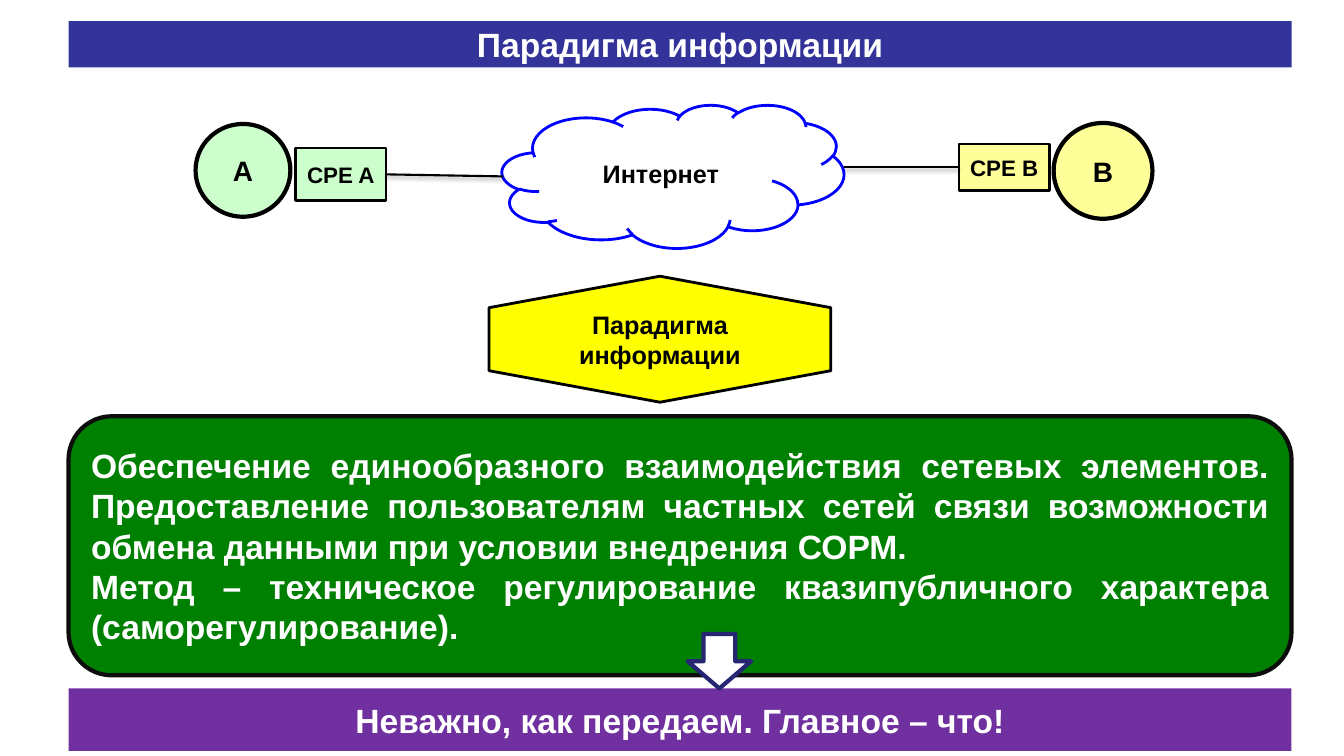
from pptx import Presentation
from pptx.dml.color import RGBColor
from pptx.enum.shapes import MSO_CONNECTOR, MSO_SHAPE
from pptx.enum.text import MSO_ANCHOR, MSO_AUTO_SIZE, PP_ALIGN
from pptx.oxml import parse_xml
from pptx.util import Inches, Pt

SHADOW = (
    '<a:effectLst xmlns:a="http://schemas.openxmlformats.org/drawingml/2006/main">'
    '<a:outerShdw blurRad="40000" dist="23000" dir="5400000" rotWithShape="0">'
    '<a:srgbClr val="000000"><a:alpha val="35000"/></a:srgbClr>'
    '</a:outerShdw></a:effectLst>'
)


def color(code):
    return RGBColor.from_string(code)


def write(shape, text, size=24, ink="000000", font="Arial",
          align=PP_ALIGN.CENTER, wrap=True):
    frame = shape.text_frame
    frame.word_wrap = wrap
    frame.auto_size = MSO_AUTO_SIZE.NONE
    frame.vertical_anchor = MSO_ANCHOR.MIDDLE
    frame.text = text
    for para in frame.paragraphs:
        para.alignment = align
        para.font.size = Pt(size)
        para.font.name = font
        para.font.bold = True
        para.font.color.rgb = color(ink)


class Board:
    left, width = 0.68, 12.13
    black, white = "000000", "FFFFFF"

    def __init__(self, slide):
        self.slide = slide

    def title(self, text, top, height, fill):
        shape = self.slide.shapes.title
        shape.left, shape.top = Inches(self.left), Inches(top)
        shape.width, shape.height = Inches(self.width), Inches(height)
        shape.fill.solid()
        shape.fill.fore_color.rgb = color(fill)
        write(shape, text, ink=self.white)

    def shape(self, kind, box, fill=None, line=None, weight=3, text=None, **style):
        shape = self.slide.shapes.add_shape(kind, *map(Inches, box))
        shape.shadow.inherit = False
        if fill:
            shape.fill.solid()
            shape.fill.fore_color.rgb = color(fill)
        else:
            shape.fill.background()
        if line:
            shape.line.color.rgb = color(line)
            shape.line.width = Pt(weight)
        else:
            shape.line.fill.background()
        if text:
            write(shape, text, **style)
        return shape

    def band(self, kind, top, height, fill, text, **style):
        box = (self.left, top, self.width, height)
        return self.shape(kind, box, fill, text=text, ink=self.white, **style)

    def node(self, box, fill, text):
        return self.shape(MSO_SHAPE.OVAL, box, fill, self.black, text=text, size=20)

    def label(self, box, fill, text):
        return self.shape(MSO_SHAPE.RECTANGLE, box, fill, self.black, 1.75,
                          text, size=16, wrap=False)

    def link(self, start, end):
        line = self.slide.shapes.add_connector(
            MSO_CONNECTOR.STRAIGHT, *map(Inches, start + end))
        line.line.color.rgb = color(self.black)
        line.line.width = Pt(1.5)
        line.element.spPr.append(parse_xml(SHADOW))
        return line


def main():
    deck = Presentation()
    deck.slide_width, deck.slide_height = Inches(13.33), Inches(7.5)
    board = Board(deck.slides.add_slide(deck.slide_layouts[5]))
    green, cream = "CCFFCC", "FFFF99"

    board.title("Парадигма информации", 0.21, 0.46, "333399")
    board.node((1.94, 1.23, 0.94, 0.92), green, "А")
    board.band(MSO_SHAPE.RECTANGLE, 6.83, 0.62, "7030A0",
               "Неважно, как передаем. Главное – что!")
    board.band(
        MSO_SHAPE.FLOWCHART_ALTERNATE_PROCESS, 4.13, 2.57, "008000",
        "Обеспечение единообразного взаимодействия сетевых элементов. "
        "Предоставление пользователям частных сетей связи возможности "
        "обмена данными при условии внедрения СОРМ.\n"
        "Метод – техническое регулирование квазипубличного характера "
        "(саморегулирование).",
        line="0D0D0D", align=PP_ALIGN.JUSTIFY)

    badge = board.shape(MSO_SHAPE.HEXAGON, (5.92, 1.67, 1.25, 3.39), "FFFF00",
                        board.black, 2, "Парадигма\nинформации", size=18)
    badge.rotation = 90
    badge.element.txBody.bodyPr.set("vert", "vert270")

    board.shape(MSO_SHAPE.DOWN_ARROW, (6.82, 6.29, 0.63, 0.54),
                board.white, "262673")
    board.node((10.45, 1.22, 0.98, 0.95), cream, "B")
    near = board.label((2.93, 1.47, 0.9, 0.52), green, "CPE A")
    far = board.label((9.51, 1.43, 0.9, 0.46), cream, "CPE B")
    board.link((8.37, 1.66), (9.51, 1.66)).end_connect(far, 1)
    board.shape(MSO_SHAPE.CLOUD, (4.98, 1.04, 3.39, 1.42), None, "0000FF", 2,
                "Интернет", size=18)
    board.link((3.83, 1.75), (4.99, 1.75)).begin_connect(near, 3)

    deck.save("out.pptx")


if __name__ == "__main__":
    main()
